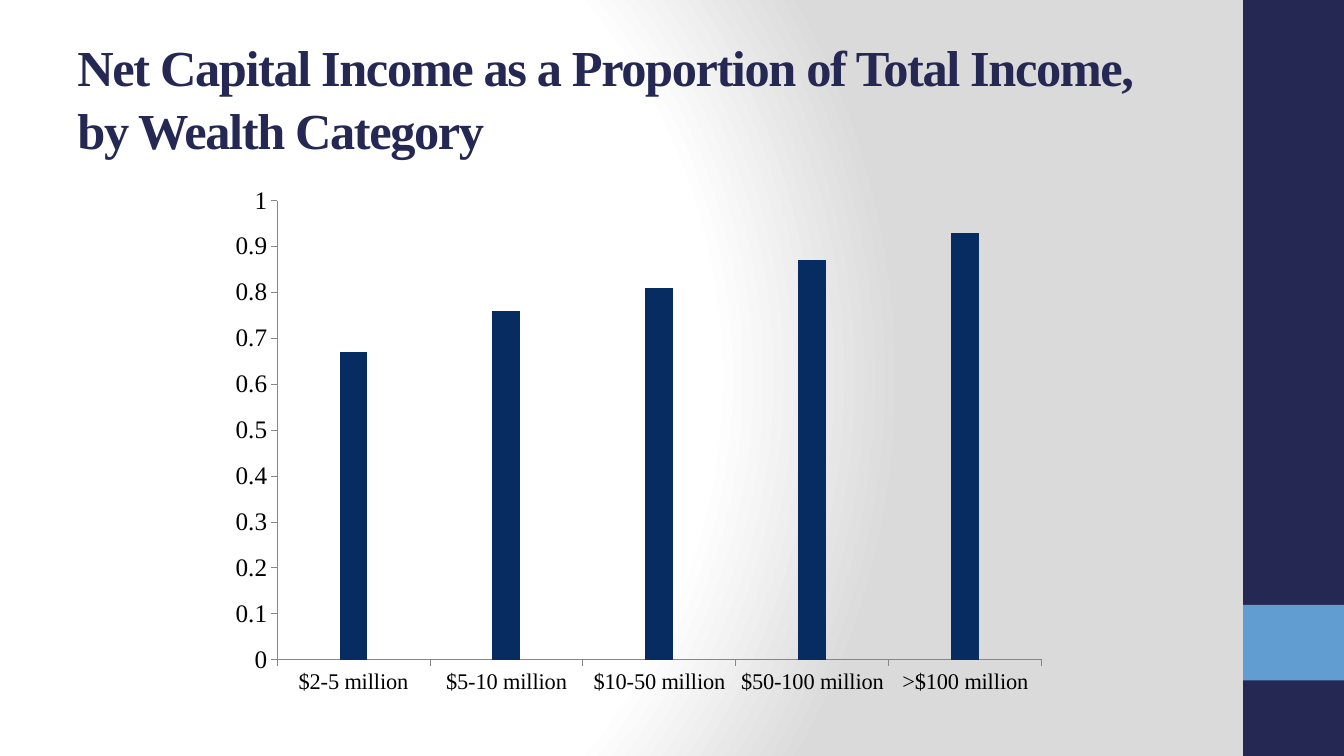
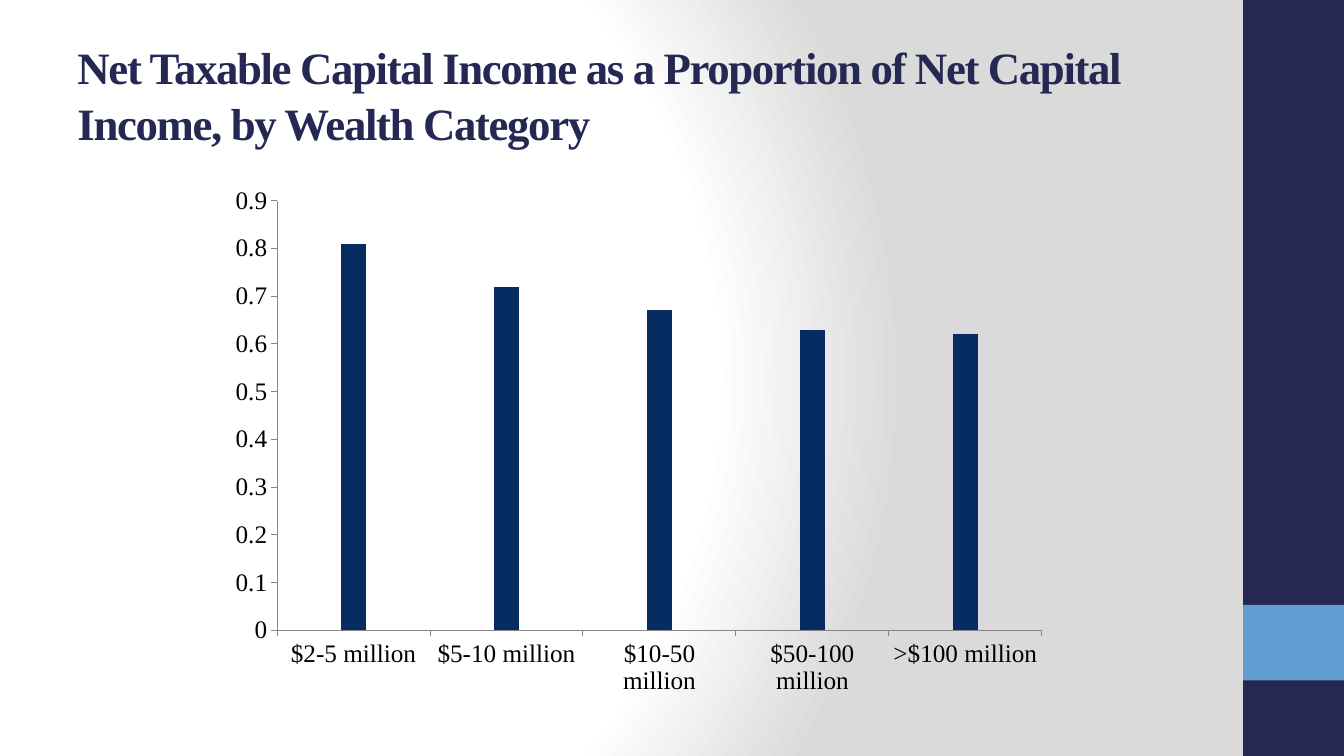
from dataclasses import dataclass

from pptx import Presentation
from pptx.chart.data import CategoryChartData
from pptx.dml.color import RGBColor
from pptx.enum.chart import XL_CHART_TYPE, XL_TICK_MARK
from pptx.enum.shapes import MSO_SHAPE
from pptx.enum.text import MSO_ANCHOR
from pptx.oxml import parse_xml
from pptx.oxml.ns import nsdecls, qn
from pptx.util import Inches, Pt

COLUMN = XL_CHART_TYPE.COLUMN_CLUSTERED
OUTSIDE, NO_TICK = XL_TICK_MARK.OUTSIDE, XL_TICK_MARK.NONE
RECT = MSO_SHAPE.RECTANGLE
MIDDLE = MSO_ANCHOR.MIDDLE


@dataclass(frozen=True)
class Theme:
    font: str = "Times New Roman"
    navy: str = "242852"
    sky: str = "629DD1"
    bar: str = "072C62"
    text: str = "000000"
    axis: str = "868686"
    light: str = "FFFFFF"
    shade: str = "DADADA"
    label: int = 18


THEME = Theme()
GROUPS = ["$2-5 million", "$5-10 million", "$10-50 million",
          "$50-100 million", ">$100 million"]

# One entry per slide: title, chart and sizes
SLIDES = [
    dict(title="Net Capital Income as a Proportion of Total Income, "
               "by Wealth Category",
         box=(0.67, 0.33, 11.25, 1.25), size=36,
         values=[0.67, 0.76, 0.81, 0.87, 0.93], top=1, gap=447, small=16),
    dict(title="Net Taxable Capital Income as a Proportion of Net Capital "
               "Income, by Wealth Category",
         box=(0.67, 0.3, 11.11, 1.25), size=32,
         values=[0.81, 0.72, 0.67, 0.63, 0.62], top=0.9, gap=500, small=18),
]


def rgb(code):
    return RGBColor.from_string(code)


def place(*box):
    return [Inches(n) for n in box]


# Radial backdrop, set once on the master
def set_back(master):
    master.background.fill.gradient()
    old = next(master.element.iter(qn("a:gradFill")))
    stops = [(0, THEME.light), (75, THEME.light), (100, THEME.shade)]
    marks = "".join(f'<a:gs pos="{pos * 1000}"><a:srgbClr val="{code}"/></a:gs>'
                    for pos, code in stops)
    new = parse_xml(
        f'<a:gradFill {nsdecls("a")} rotWithShape="1"><a:gsLst>{marks}</a:gsLst>'
        '<a:path path="circle"><a:fillToRect l="20000" t="50000" '
        'r="100000" b="50000"/></a:path></a:gradFill>')
    old.getparent().replace(old, new)


def add_band(slide, top, height, code):
    band = slide.shapes.add_shape(RECT, *place(12.33, top, 1, height))
    band.shadow.inherit = False
    band.fill.solid()
    band.fill.fore_color.rgb = rgb(code)
    band.line.fill.background()


def add_title(slide, text, box, size):
    frame = slide.shapes.add_textbox(*place(*box)).text_frame
    frame.word_wrap = True
    frame.vertical_anchor = MIDDLE
    frame.text = text
    para = frame.paragraphs[0]
    para.line_spacing = 1.05
    run = para.runs[0]
    run.font.name = THEME.font
    run.font.size = Pt(size)
    run.font.bold = True
    run.font.color.rgb = rgb(THEME.navy)
    run.font._element.set("spc", "-100")


def style_axis(axis, size):
    axis.has_major_gridlines = False
    axis.major_tick_mark = OUTSIDE
    axis.minor_tick_mark = NO_TICK
    axis.format.line.color.rgb = rgb(THEME.axis)
    axis.format.line.width = Pt(0.75)
    axis.tick_labels.font.size = Pt(size)


def add_bars(slide, values, top, gap, small):
    data = CategoryChartData()
    data.categories = GROUPS
    data.add_series("Series 1", values)
    chart = slide.shapes.add_chart(
        COLUMN, *place(2.17, 1.75, 8.33, 5.25), data).chart
    chart.has_legend = False
    chart.has_title = False
    chart.font.name = THEME.font
    chart.font.size = Pt(THEME.label)
    chart.font.color.rgb = rgb(THEME.text)

    # Columns
    plot = chart.plots[0]
    plot.gap_width = gap
    plot.vary_by_categories = False
    fill = plot.series[0].format.fill
    fill.solid()
    fill.fore_color.rgb = rgb(THEME.bar)

    # Axes
    style_axis(chart.category_axis, small)
    scale = chart.value_axis
    style_axis(scale, THEME.label)
    scale.minimum_scale = 0
    scale.maximum_scale = top
    scale.major_unit = 0.1


def add_page(deck, title, box, size, **bars):
    slide = deck.slides.add_slide(deck.slide_layouts[6])
    add_band(slide, 0, 7.5, THEME.navy)
    add_band(slide, 6, 0.75, THEME.sky)
    add_title(slide, title, box, size)
    add_bars(slide, **bars)


def main():
    deck = Presentation()
    deck.slide_width, deck.slide_height = place(13.33, 7.5)
    set_back(deck.slide_master)
    for page in SLIDES:
        add_page(deck, **page)
    deck.save("out.pptx")


if __name__ == "__main__":
    main()
